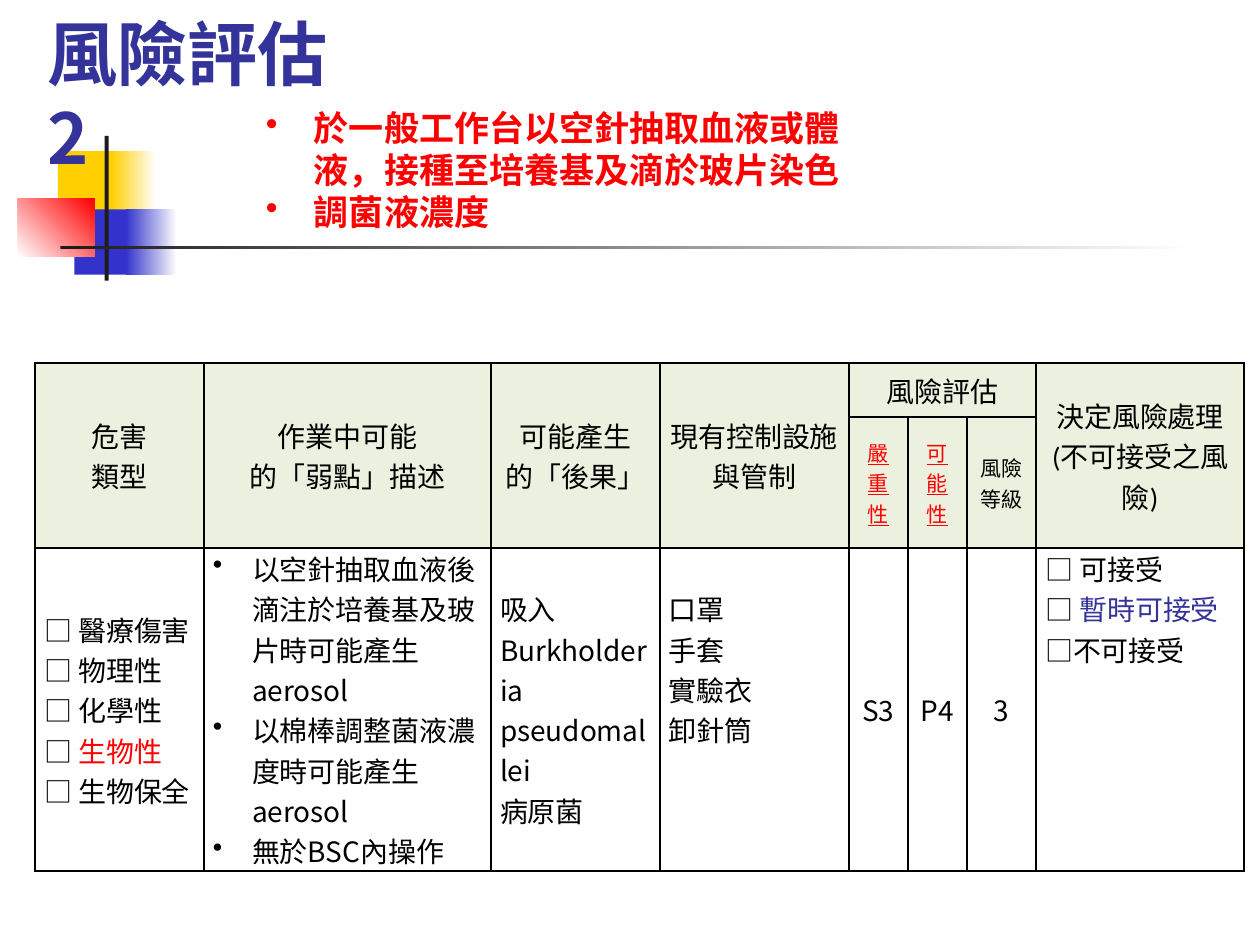
from lxml import etree
from pptx import Presentation, util as u
from pptx.dml.color import RGBColor
from pptx.enum import shapes, text
from pptx.oxml import parse_xml
from pptx.oxml.ns import qn, nsdecls

Cm, Pt = u.Cm, u.Pt
RED, BLUE, BLACK, WHITE = "FF0000", "333399", "000000", "FFFFFF"
CJK, TC = "Noto Sans CJK SC", "Noto Sans CJK TC"
rgb = RGBColor.from_string


def write(tf, lines, size, latin, ea, color=BLACK, bold=False, align=None,
          indent=0, spacing=None, underline=False):
    """Fill a text frame; a line is a string or a list of (text, colour) runs."""
    for i, line in enumerate(lines):
        p = tf.paragraphs[0] if i == 0 else tf.add_paragraph()
        f = p.font
        f.size, f.name, f.bold, f.underline = Pt(size), latin, bold, underline
        etree.SubElement(f._element, qn("a:ea")).set("typeface", ea)
        if align:
            p.alignment = align
        if spacing:
            p.line_spacing = Pt(spacing)
        if indent:
            pPr = p._p.get_or_add_pPr()
            pPr.set("marL", str(Cm(indent)))
            pPr.set("indent", str(-Cm(indent)))
            pPr.find(qn("a:defRPr")).addprevious(
                parse_xml(f'<a:buChar {nsdecls("a")} char="•"/>'))
        if isinstance(line, str):
            f.color.rgb = rgb(color)
            line = [(line, None)]
        for words, run_color in line:
            r = p.add_run()
            r.text = words
            if run_color:
                r.font.color.rgb = rgb(run_color)


prs = Presentation()
prs.slide_width, prs.slide_height = Cm(25.4), Cm(19.05)
s = prs.slides.add_slide(prs.slide_layouts[6])

# Decoration: left, top, width, height, colours, gradient angle
for x, y, w, h, colors, angle in [
    (1.17, 3.05, 1.22, 1.32, ["FFCF01"], 0),
    (2.24, 3.05, 0.91, 1.32, ["FFCF01", WHITE], 0),
    (1.5, 4.22, 1.17, 1.32, ["3333CC"], 0),
    (2.54, 4.22, 1.02, 1.32, ["3333CC", WHITE], 0),
    (0.36, 4.01, 1.55, 1.17, [WHITE, RED], 45),
    (2.11, 2.74, 0.08, 2.92, ["1C1C1C"], 0),
    (1.22, 4.95, 22.86, 0.08, ["1C1C1C", WHITE], 0),
]:
    sp = s.shapes.add_shape(shapes.MSO_SHAPE.RECTANGLE, Cm(x), Cm(y), Cm(w), Cm(h))
    sp.shadow.inherit = False
    sp.line.fill.background()
    if len(colors) == 1:
        sp.fill.solid()
        sp.fill.fore_color.rgb = rgb(colors[0])
    else:
        sp.fill.gradient()
        sp.fill.gradient_angle = angle
        for stop, c in zip(sp.fill.gradient_stops, colors):
            stop.color.rgb = rgb(c)

# Hazard table
widths = [3.4, 5.79, 3.4, 3.81, 1.19, 1.19, 1.4, 4.19]
heights = [1.09, 2.64, 4.67]
tbl = s.shapes.add_table(3, 8, Cm(0.71), Cm(7.32), Cm(sum(widths)), Cm(sum(heights))).table
for col, w in zip(tbl.columns, widths):
    col.width = Cm(w)
for row, h in zip(tbl.rows, heights):
    row.height = Cm(h)

for r in range(3):
    for c in range(8):
        cell = tbl.cell(r, c)
        cell.margin_left = cell.margin_right = Cm(0.18)
        cell.margin_top = cell.margin_bottom = 0
        cell.vertical_anchor = text.MSO_ANCHOR.MIDDLE
        if r < 2:
            cell.fill.solid()
            cell.fill.fore_color.rgb = rgb("EBF1DE")
        else:
            cell.fill.background()
        for i, side in enumerate("LRTB"):
            cell._tc.tcPr.insert(i, parse_xml(
                f'<a:ln{side} {nsdecls("a")} w="12700"><a:solidFill>'
                f'<a:srgbClr val="{BLACK}"/></a:solidFill></a:ln{side}>'))

for c in (0, 1, 2, 3, 7):
    tbl.cell(0, c).merge(tbl.cell(1, c))
tbl.cell(0, 4).merge(tbl.cell(0, 6))

center = text.PP_ALIGN.CENTER
headers = {
    0: ["危害", "類型"],
    1: ["作業中可能", "的「弱點」描述"],
    2: ["可能產生", "的「後果」"],
    3: ["現有控制設施", "與管制"],
    4: ["風險評估"],
    7: ["決定風險處理", "(不可接受之風險)"],
}
for c, lines in headers.items():
    write(tbl.cell(0, c).text_frame, lines, 16, "Calibri", TC, align=center)
for c, label, color in [(4, "嚴重性", RED), (5, "可能性", RED), (6, "風險等級", BLACK)]:
    write(tbl.cell(1, c).text_frame, [label], 12, "Calibri", TC, color,
          align=center, underline=color == RED)

body = [
    ["□ 醫療傷害", "□ 物理性", "□ 化學性",
     [("□ ", BLACK), ("生物性", RED)], "□ 生物保全"],
    ["以空針抽取血液後滴注於培養基及玻片時可能產生aerosol",
     "以棉棒調整菌液濃度時可能產生aerosol", "無於BSC內操作"],
    ["吸入Burkholderia pseudomallei", "病原菌"],
    ["口罩", "手套", "實驗衣", "卸針筒"],
    ["S3"], ["P4"], ["3"],
    ["□ 可接受", [("□ ", BLACK), ("暫時可接受", BLUE)], "□不可接受"],
]
for c, lines in enumerate(body):
    cell = tbl.cell(2, c)
    write(cell.text_frame, lines, 16, "Calibri" if c in (0, 7) else TC, TC,
          align=center if c in (4, 5, 6) else None, indent=0.79 if c == 1 else 0)
    if c in (2, 3, 7):
        cell.vertical_anchor = text.MSO_ANCHOR.TOP
    if c in (2, 3):
        cell.margin_top = Cm(0.81)

# Procedure and title
tf = s.shapes.add_textbox(Cm(5.11), Cm(2.03), Cm(12.7), Cm(2.82)).text_frame
tf.word_wrap = True
write(tf, ["於一般工作台以空針抽取血液或體液，接種至培養基及滴於玻片染色", "調菌液濃度"],
      20, CJK, CJK, RED, bold=True, indent=0.97, spacing=24)

tf = s.shapes.add_textbox(Cm(0.71), Cm(0.08), Cm(6.8), Cm(1.96)).text_frame
tf.word_wrap = True
write(tf, ["風險評估2"], 40, CJK, CJK, BLUE, bold=True, spacing=48)

prs.save("out.pptx")
